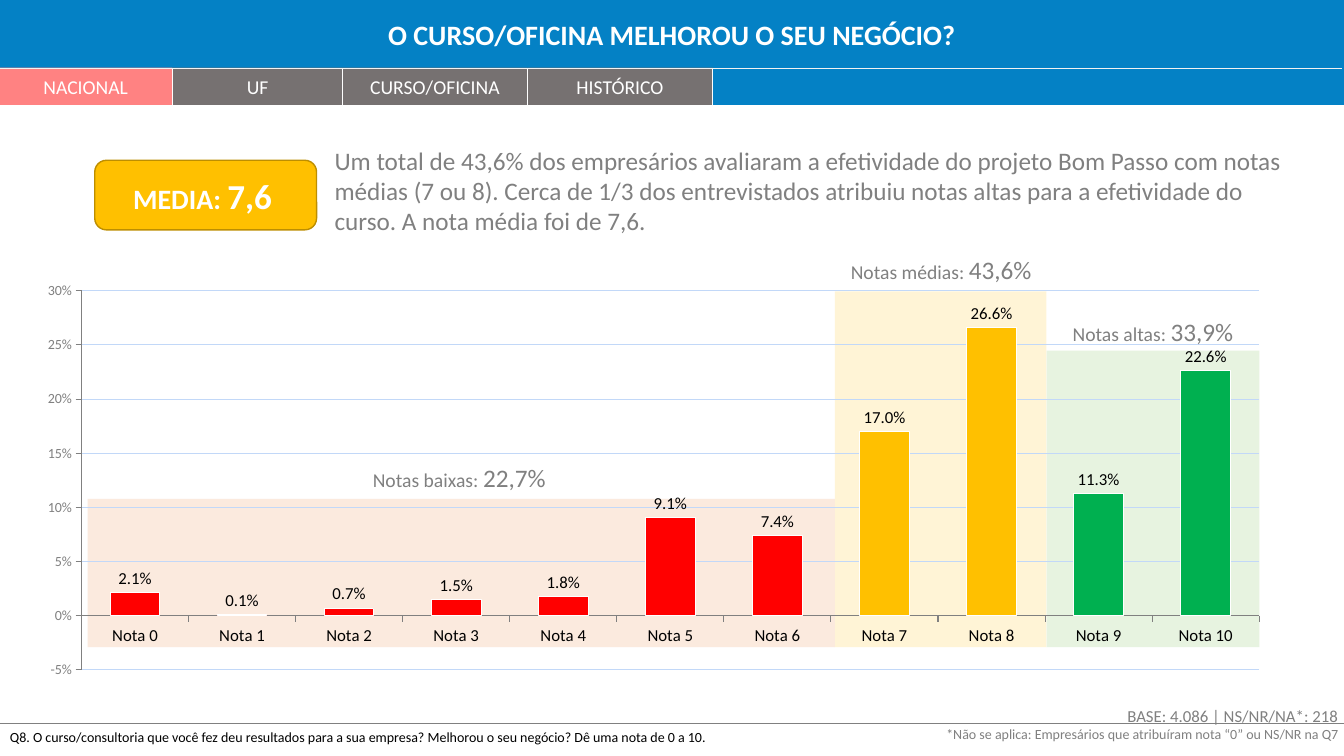
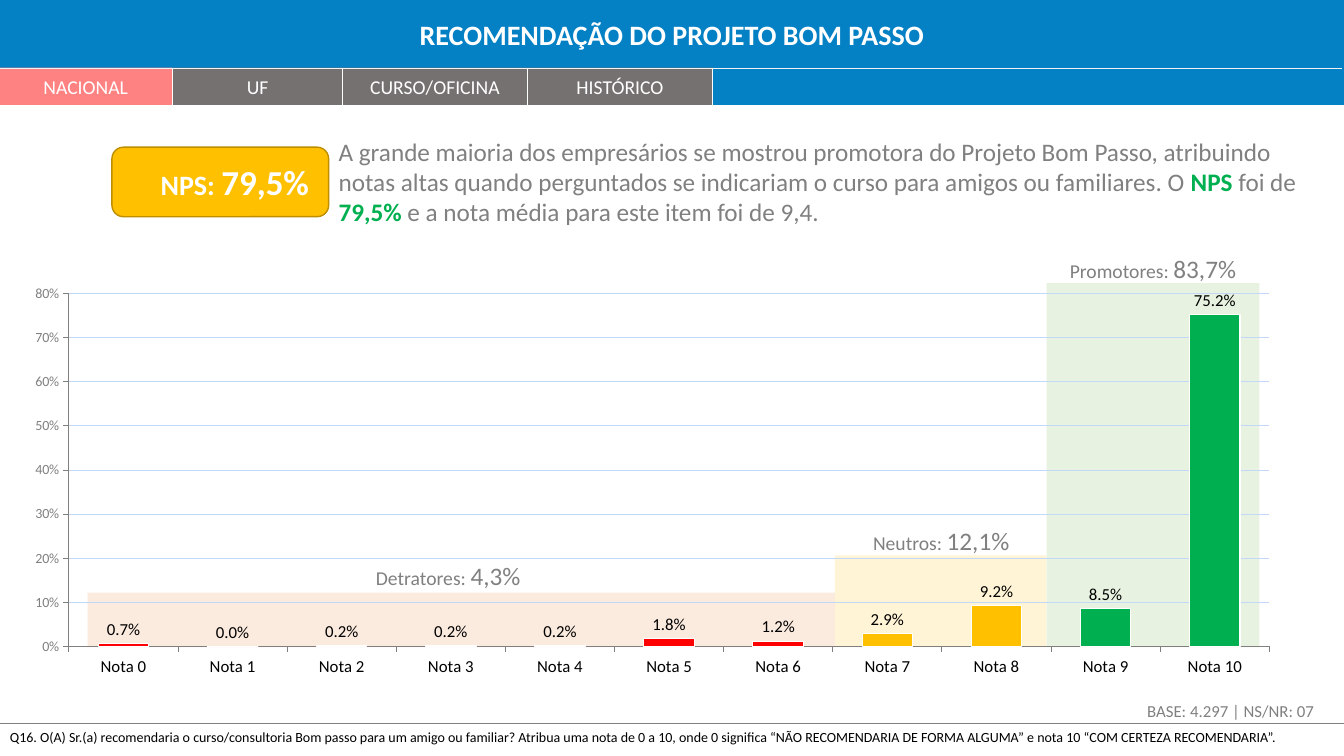
from dataclasses import dataclass
from itertools import pairwise

from lxml.etree import SubElement
from pptx import Presentation
from pptx.chart.data import CategoryChartData
from pptx.dml.color import RGBColor
from pptx.enum.chart import XL_CHART_TYPE as ChartType
from pptx.enum.chart import XL_LABEL_POSITION as LabelPosition
from pptx.enum.chart import XL_TICK_MARK as TickMark
from pptx.enum.shapes import MSO_CONNECTOR as Connector
from pptx.enum.shapes import MSO_SHAPE as ShapeKind
from pptx.enum.text import MSO_ANCHOR as Anchor
from pptx.enum.text import PP_ALIGN as Align
from pptx.oxml import parse_xml
from pptx.oxml.ns import nsdecls, qn
from pptx.util import Inches, Pt

FONT = "Calibri"
COLORS = {
    "white": "FFFFFF", "black": "000000", "gray": "808080", "blue": "0481C5",
    "active": "FF8282", "tab": "767171", "rule": "F2F2F2", "grid": "C2D8F8",
    "red": "FF0000", "amber": "FFC000", "amber_line": "BD8E00", "green": "00B050",
    "low": "FBE5D6", "middle": "FFF2CC", "high": "E2F0D9",
}
TABS = ("NACIONAL", "UF", "CURSO/OFICINA", "HISTÓRICO")
TAB_EDGES = (-0.01, 1.71, 3.4, 5.23, 7.07)
TAB_TOP, BAND_BOTTOM = 0.67, 1.04
ZONE_BOTTOM = 6.42
# name: (left, right, opacity in percent)
ZONES = {"middle": (8.28, 10.38, 79), "high": (10.38, 12.49, 80), "low": (0.87, 8.28, 79)}

Area = tuple[float, float, float, float]


@dataclass(frozen=True)
class Span:
    text: str
    size: float
    color: str = "gray"
    bold: bool = False


@dataclass(frozen=True)
class TextBlock:
    area: Area
    paragraphs: tuple[tuple[Span, ...], ...]
    align: Align = Align.LEFT


@dataclass(frozen=True)
class Zone:
    top: float
    name: str
    share: str
    label_area: Area


@dataclass(frozen=True)
class Scale:
    minimum: float
    maximum: float
    step: float


@dataclass(frozen=True)
class Survey:
    title: str
    question: str
    summary: TextBlock
    badge: TextBlock
    zones: dict[str, Zone]
    values: tuple[float, ...]
    scale: Scale
    plot: Area
    base: TextBlock


def rgb(name: str) -> RGBColor:
    return RGBColor.from_string(COLORS[name])


def write(frame, paragraphs, align: Align) -> None:
    frame.word_wrap = True
    for index, spans in enumerate(paragraphs):
        para = frame.paragraphs[0] if index == 0 else frame.add_paragraph()
        para.alignment = align
        for span in spans:
            run = para.add_run()
            run.text = span.text
            font = run.font
            font.name, font.size, font.bold = FONT, Pt(span.size), span.bold
            font.color.rgb = rgb(span.color)


def add_text(page, block: TextBlock) -> None:
    box = page.shapes.add_textbox(*map(Inches, block.area))
    write(box.text_frame, block.paragraphs, block.align)


def add_panel(page, area: Area, fill: str, kind=ShapeKind.RECTANGLE, line: str = ""):
    panel = page.shapes.add_shape(kind, *map(Inches, area))
    panel.shadow.inherit = False
    panel.fill.solid()
    panel.fill.fore_color.rgb = rgb(fill)
    if line:
        panel.line.color.rgb = rgb(line)
        panel.line.width = Pt(1)
    else:
        panel.line.fill.background()
    panel.text_frame.vertical_anchor = Anchor.MIDDLE
    return panel


def add_line(page, start: tuple[float, float], end: tuple[float, float],
             color: str, width: float) -> None:
    line = page.shapes.add_connector(Connector.STRAIGHT, *map(Inches, start + end))
    line.line.color.rgb = rgb(color)
    line.line.width = Pt(width)
    SubElement(line._element.spPr, qn("a:effectLst"))


def add_zones(page, zones: dict[str, Zone]) -> None:
    for name, (left, right, opacity) in ZONES.items():
        top = zones[name].top
        panel = add_panel(page, (left, top, right - left, ZONE_BOTTOM - top), name)
        color = panel._element.spPr.find(".//" + qn("a:srgbClr"))
        SubElement(color, qn("a:alpha")).set("val", str(opacity * 1000))


def add_header(page, title: str) -> None:
    add_panel(page, (-0.01, 0, 13.34, BAND_BOTTOM), "blue")
    add_text(page, TextBlock((0, 0.12, 13.33, 0.44),
                             ((Span(title, 20, "white", True),),), Align.CENTER))
    for label, (left, right) in zip(TABS, pairwise(TAB_EDGES)):
        fill = "active" if label == TABS[0] else "tab"
        tab = add_panel(page, (left, TAB_TOP, right - left, BAND_BOTTOM - TAB_TOP), fill)
        write(tab.text_frame, ((Span(label, 14, "white"),),), Align.CENTER)
    for edge in TAB_EDGES[1:]:
        add_line(page, (edge, BAND_BOTTOM), (edge, TAB_TOP), "white", 0.5)
    add_line(page, (-0.03, 0.68), (13.31, 0.68), "rule", 1)


def add_footer(page, question: str) -> None:
    add_line(page, (0, 7.18), (13.33, 7.18), "gray", 0.5)
    add_text(page, TextBlock((0, 7.18, 13.33, 0.27), ((Span(question, 10, "black"),),)))


def add_badge(page, badge: TextBlock) -> None:
    panel = add_panel(page, badge.area, "amber", ShapeKind.ROUNDED_RECTANGLE, "amber_line")
    write(panel.text_frame, badge.paragraphs, badge.align)


def style_font(font, size: float, color: str) -> None:
    font.name, font.size = FONT, Pt(size)
    font.color.rgb = rgb(color)


def fix_plot(chart, plot: Area) -> None:
    """Set the inner plot area and leave the chart background clear."""
    space = chart._chartSpace
    area = space.chart.plotArea
    for old in area.findall(qn("c:layout")):
        area.remove(old)
    parts = "".join(f'<c:{tag} val="{value}"/>' for tag, value in zip("xywh", plot))
    area.insert(0, parse_xml(
        f'<c:layout {nsdecls("c")}><c:manualLayout><c:layoutTarget val="inner"/>'
        f'<c:xMode val="edge"/><c:yMode val="edge"/>{parts}</c:manualLayout></c:layout>'))
    clear = (f'<c:spPr {nsdecls("c", "a")}><a:noFill/>'
             '<a:ln><a:noFill/></a:ln></c:spPr>')
    area.append(parse_xml(clear))
    space.chart.addnext(parse_xml(clear))


def point_color(grade: int) -> str:
    return "red" if grade < 7 else "amber" if grade < 9 else "green"


def add_grades_chart(page, survey: Survey) -> None:
    data = CategoryChartData()
    data.categories = [f"Nota {grade}" for grade in range(len(survey.values))]
    data.add_series("Series 1", survey.values)
    chart = page.shapes.add_chart(ChartType.COLUMN_CLUSTERED, Inches(0.22), Inches(2.73),
                                  Inches(12.52), Inches(4.08), data).chart
    chart.has_legend = chart.has_title = False
    style_font(chart.font, 10, "gray")
    fix_plot(chart, survey.plot)

    values, categories = chart.value_axis, chart.category_axis
    values.minimum_scale = survey.scale.minimum
    values.maximum_scale = survey.scale.maximum
    values.major_unit = survey.scale.step
    values.tick_labels.number_format = "0%"
    values.tick_labels.number_format_is_linked = False
    values.major_gridlines.format.line.color.rgb = rgb("grid")
    values.major_gridlines.format.line.width = Pt(0.75)
    style_font(values.tick_labels.font, 10, "gray")
    style_font(categories.tick_labels.font, 12, "black")
    for axis in (values, categories):
        axis.major_tick_mark = TickMark.OUTSIDE
        axis.format.line.color.rgb = rgb("gray")
        axis.format.line.width = Pt(0.75)

    plot = chart.plots[0]
    plot.gap_width = 116
    plot.vary_by_categories = False
    plot.has_data_labels = True
    labels = plot.data_labels
    labels.show_value = True
    labels.number_format, labels.number_format_is_linked = "0.0%", False
    labels.position = LabelPosition.OUTSIDE_END
    style_font(labels.font, 12, "black")
    series = plot.series[0]
    series.invert_if_negative = False
    bars = [series] + [series.points[grade] for grade in range(7, len(survey.values))]
    for grade, bar in enumerate(bars, start=6):
        bar.format.fill.solid()
        bar.format.fill.fore_color.rgb = rgb(point_color(grade))
        bar.format.line.color.rgb = rgb("white")
        bar.format.line.width = Pt(0.75)


def add_survey(deck, survey: Survey) -> None:
    page = deck.slides.add_slide(deck.slide_layouts[6])
    add_zones(page, survey.zones)
    add_footer(page, survey.question)
    add_header(page, survey.title)
    add_text(page, survey.summary)
    add_badge(page, survey.badge)
    add_grades_chart(page, survey)
    add_text(page, survey.base)
    for zone in survey.zones.values():
        spans = (Span(f"{zone.name}: ", 14), Span(zone.share, 18))
        add_text(page, TextBlock(zone.label_area, (spans,), Align.CENTER))


def badge_spans(name: str, value: str) -> tuple[tuple[Span, ...], ...]:
    return ((Span(f"{name}: ", 20, "white", True), Span(value, 25, "white", True),
             Span(" ", 20, "white", True)),)


SURVEYS = (
    Survey(
        title="O CURSO/OFICINA MELHOROU O SEU NEGÓCIO?",
        question="Q8. O curso/consultoria que você fez deu resultados para a sua empresa? "
                 "Melhorou o seu negócio? Dê uma nota de 0 a 10.",
        summary=TextBlock((3.22, 1.39, 9.63, 1.01), ((Span(
            "Um total de 43,6% dos empresários avaliaram a efetividade do projeto Bom Passo "
            "com notas médias (7 ou 8). Cerca de 1/3 dos entrevistados atribuiu notas altas "
            "para a efetividade do curso. A nota média foi de 7,6.", 18),),)),
        badge=TextBlock((0.94, 1.59, 2.2, 0.69), badge_spans("MEDIA", "7,6"), Align.CENTER),
        zones={
            "low": Zone(4.95, "Notas baixas", "22,7%", (3.22, 4.54, 2.67, 0.4)),
            "middle": Zone(2.89, "Notas médias", "43,6%", (8.28, 2.47, 2.11, 0.4)),
            "high": Zone(3.48, "Notas altas", "33,9%", (10.38, 3.09, 2.11, 0.4)),
        },
        values=(0.021, 0.001, 0.007, 0.015, 0.018, 0.091, 0.074, 0.17, 0.266, 0.113, 0.226),
        scale=Scale(-0.05, 0.3, 0.05),
        plot=(0.047, 0.038, 0.933, 0.922),
        base=TextBlock((6.48, 6.95, 6.89, 0.47), (
            (Span("BASE: 4.086 | NS/NR/NA*: 218", 12),),
            (Span("*Não se aplica: Empresários que atribuíram nota “0” ou NS/NR na Q7", 10),),
        ), Align.RIGHT),
    ),
    Survey(
        title="RECOMENDAÇÃO DO PROJETO BOM PASSO",
        question="Q16. O(A) Sr.(a) recomendaria o curso/consultoria Bom passo para um amigo ou "
                 "familiar? Atribua uma nota de 0 a 10, onde 0 significa “NÃO RECOMENDARIA DE "
                 "FORMA ALGUMA” e nota 10 “COM CERTEZA RECOMENDARIA”.",
        summary=TextBlock((3.26, 1.3, 9.71, 1.01), ((
            Span("A grande maioria dos empresários se mostrou promotora do Projeto Bom Passo, "
                 "atribuindo notas altas quando perguntados se indicariam o curso para amigos "
                 "ou familiares. O ", 18),
            Span("NPS", 18, "green", True), Span(" foi de ", 18),
            Span("79,5%", 18, "green", True),
            Span(" e a nota média para este item foi de 9,4.", 18)),)),
        badge=TextBlock((1.11, 1.46, 2.15, 0.69), badge_spans("NPS", "79,5%"), Align.RIGHT),
        zones={
            "low": Zone(5.88, "Detratores", "4,3%", (3.11, 5.51, 2.67, 0.4)),
            "middle": Zone(5.51, "Neutros", "12,1%", (8.28, 5.16, 2.11, 0.4)),
            "high": Zone(2.81, "Promotores", "83,7%", (10.38, 2.46, 2.11, 0.4)),
        },
        values=(0.007, 0, 0.002, 0.002, 0.002, 0.018, 0.012, 0.029, 0.092, 0.085, 0.752),
        scale=Scale(0, 0.8, 0.1),
        plot=(0.037, 0.045, 0.951, 0.858),
        base=TextBlock((11.28, 6.9, 2.03, 0.3), ((Span("BASE: 4.297 | NS/NR: 07", 12),),)),
    ),
)


def main() -> None:
    deck = Presentation()
    deck.slide_width, deck.slide_height = Inches(13.33), Inches(7.5)
    for survey in SURVEYS:
        add_survey(deck, survey)
    deck.save("out.pptx")


if __name__ == "__main__":
    main()
